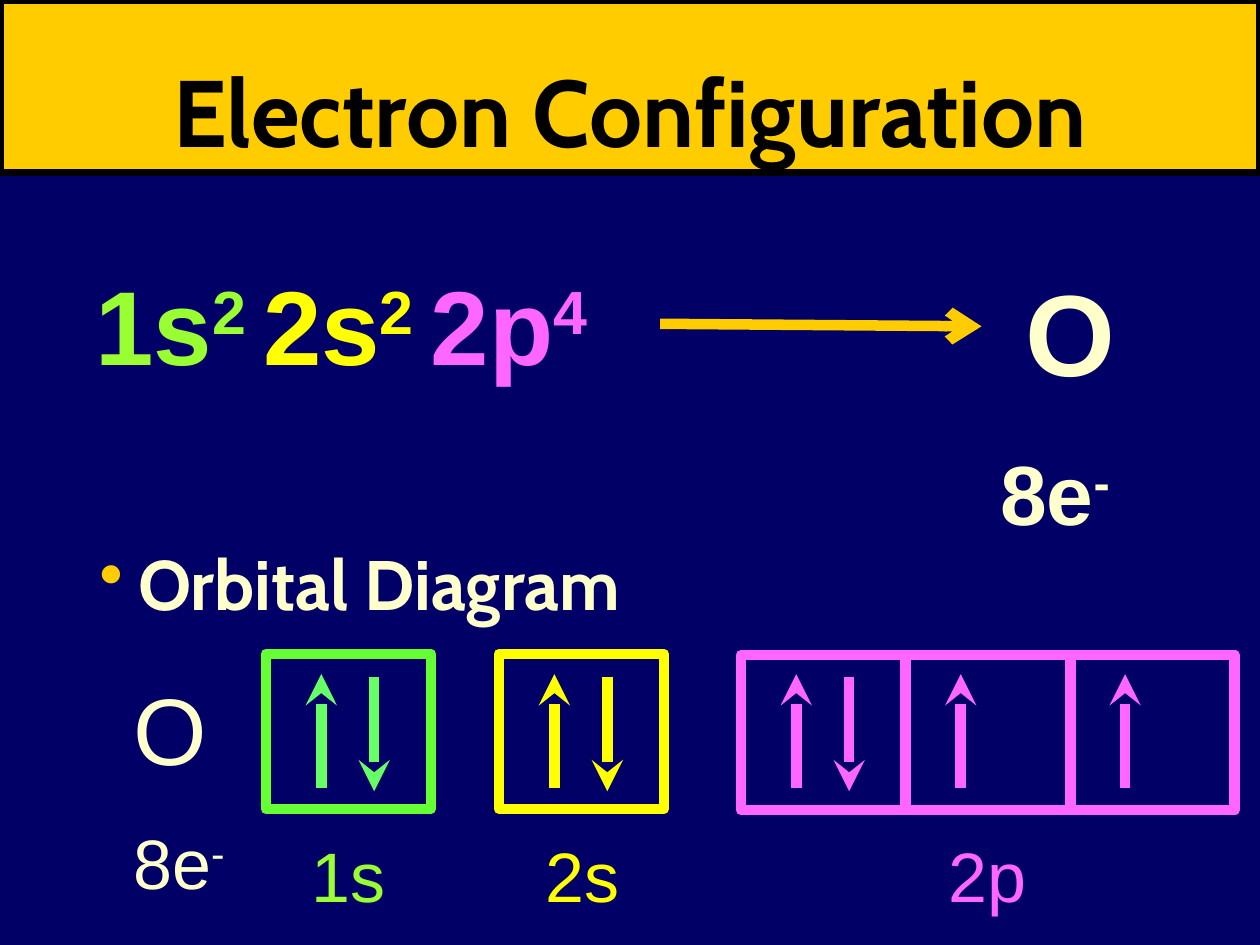
from lxml.etree import SubElement
from pptx import Presentation
from pptx.dml.color import RGBColor
from pptx.enum.shapes import MSO_CONNECTOR as LINE, MSO_SHAPE as SHAPE
from pptx.enum.text import MSO_ANCHOR as ANCHOR, PP_ALIGN as ALIGN
from pptx.oxml.ns import qn
from pptx.util import Inches, Pt

CREAM, GOLD, BLACK, NAVY = "FFFFCC", "FFCC00", "000000", "000066"
LIME, YELLOW, PINK = "99FF33", "FFFF00", "FF66FF"


def paint(color, hue):
    color.rgb = RGBColor.from_string(hue)


class Pen:
    """Holds the text style and the slide, and draws each kind of element."""

    def __init__(self, slide, font="Arial", head="Cabin", width=6):
        self.slide, self.font, self.head, self.width = slide, font, head, width
        slide.background.fill.solid()
        paint(slide.background.fill.fore_color, NAVY)

    def run(self, para, text, hue, size, bold, font, raised=False):
        run = para.add_run()
        run.text = text
        run.font.name, run.font.size, run.font.bold = font, Pt(size), bold
        paint(run.font.color, hue)
        if raised:
            run.font._element.set("baseline", "30000")

    def words(self, para, parts, size, bold=False, font=None, before=0, lead=None):
        if lead:
            para.line_spacing = lead
        props = para._p.get_or_add_pPr()
        if before:
            gap = SubElement(props, qn("a:spcBef"))
            SubElement(gap, qn("a:spcPct"), val=str(before * 1000))
        for text, hue in parts:
            base, _, power = text.partition("^")
            self.run(para, base, hue, size, bold, font or self.font)
            if power:
                self.run(para, power, hue, size, bold, font or self.font, True)
        return props

    def text(self, x, y, w, h, wrap=True):
        box = self.slide.shapes.add_textbox(Inches(x), Inches(y), Inches(w), Inches(h))
        box.text_frame.word_wrap = wrap
        return box.text_frame

    def atom(self, x, y, w, h, rows, bold=False):
        frame = self.text(x, y, w, h)
        for i, (text, size, inset) in enumerate(rows):
            para = frame.add_paragraph() if i else frame.paragraphs[0]
            props = self.words(para, [(text, CREAM)], size, bold, before=50)
            props.set("marL", str(Inches(inset)))
            props.set("indent", "0")

    def bullet(self, x, y, w, h, text):
        para = self.text(x, y, w, h).paragraphs[0]
        props = self.words(para, [(text, CREAM)], 40, True, self.head, 20)
        props.set("marL", str(Inches(0.31)))
        props.set("indent", str(Inches(-0.31)))
        tint = SubElement(props, qn("a:buClr"))
        SubElement(tint, qn("a:srgbClr"), val=GOLD)
        SubElement(props, qn("a:buChar"), char="•")

    def label(self, x, y, w, h, text, hue):
        para = self.text(x, y, w, h, False).paragraphs[0]
        para.alignment = ALIGN.CENTER
        self.words(para, [(text, hue)], 40, before=20, lead=1.3)

    def rect(self, x, y, w, h, line, width=None, fill=None):
        box = self.slide.shapes.add_shape(
            SHAPE.RECTANGLE, Inches(x), Inches(y), Inches(w), Inches(h))
        box.shadow.inherit = False
        if fill:
            box.fill.solid()
            paint(box.fill.fore_color, fill)
        else:
            box.fill.background()
        paint(box.line.color, line)
        box.line.width = Pt(width or self.width)
        return box

    def title(self, text):
        frame = self.rect(0, 0, 10, 1.37, BLACK, 4.5, GOLD).text_frame
        frame.word_wrap = True
        frame.vertical_anchor = ANCHOR.BOTTOM
        frame.paragraphs[0].alignment = ALIGN.CENTER
        self.words(frame.paragraphs[0], [(text, BLACK)], 54, True, self.head)

    def arrow(self, x, y, to_x, to_y, hue, tip="stealth"):
        line = self.slide.shapes.add_connector(
            LINE.STRAIGHT, Inches(x), Inches(y), Inches(to_x), Inches(to_y))
        paint(line.line.color, hue)
        line.line.width = Pt(self.width)
        SubElement(line.line._get_or_add_ln(), qn("a:tailEnd"), type=tip)
        SubElement(line._element.spPr, qn("a:effectLst"))

    def cell(self, x, y, spins, edge, hue):
        if spins:
            self.arrow(x + 0.44, 6.25, x + 0.44, 5.35, hue)
        if spins == 2:
            self.arrow(x + 0.86, 5.37, x + 0.86, 6.28, hue)
        self.rect(x, y, 1.31, 1.23, edge)


def main():
    deck = Presentation()
    deck.slide_width, deck.slide_height = Inches(10), Inches(7.5)
    pen = Pen(deck.slides.add_slide(deck.slide_layouts[6]))
    pen.title("Electron Configuration")

    shells = pen.text(0.66, 1.72, 4.34, 1.4).paragraphs[0]
    parts = [("1s^2 ", LIME), ("2s^2 ", YELLOW), ("2p^4", PINK)]
    pen.words(shells, parts, 60, True, before=50, lead=1.3)
    pen.arrow(5.24, 2.57, 7.79, 2.59, GOLD, "arrow")
    pen.atom(7.28, 2.02, 2.51, 2.4, [("O", 66, 0.76), ("8e^-", 48, 0.56)], True)

    pen.bullet(0.69, 4.24, 8.94, 1.04, "Orbital Diagram")
    pen.atom(0.34, 5.28, 1.82, 2, [("O", 54, 0.62), ("8e^-", 40, 0.62)])
    orbits = [
        ("1s", 2.11, 5.19, [2], 2.37, 0.79, LIME, "66FF33", "66FF66"),
        ("2s", 3.96, 5.19, [2], 4.23, 0.79, YELLOW, YELLOW, YELLOW),
        ("2p", 5.88, 5.2, [2, 1, 1], 7.43, 0.82, PINK, PINK, PINK),
    ]
    for name, x, y, cells, left, wide, hue, edge, spin in orbits:
        pen.label(left, 6.36, wide, 0.97, name, hue)
        for i, spins in enumerate(cells):
            pen.cell(x + i * 1.305, y, spins, edge, spin)
    deck.save("out.pptx")


if __name__ == "__main__":
    main()
